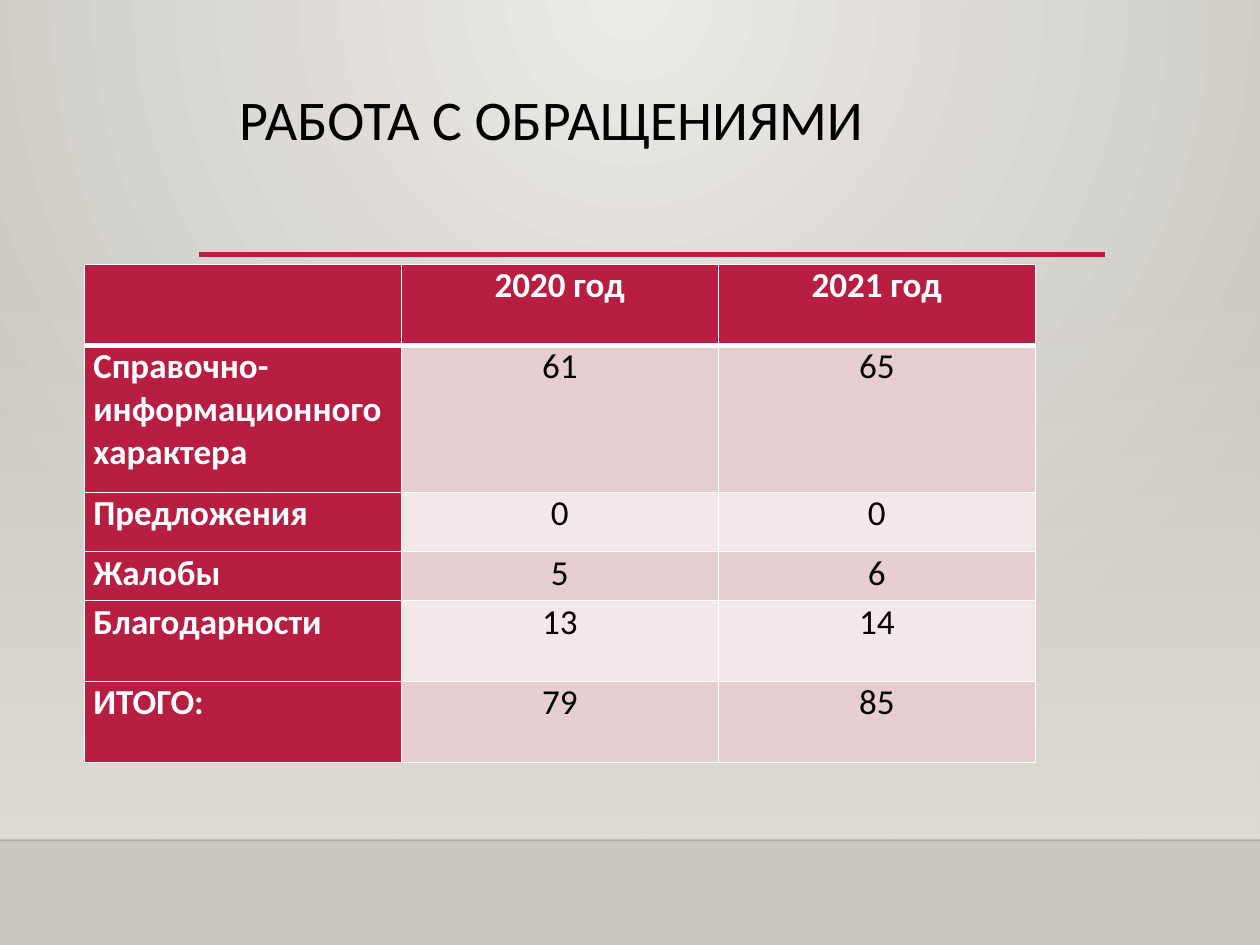
"""Build a slide with a table of citizens' requests by year."""
from dataclasses import dataclass

from lxml import etree
from pptx import Presentation
from pptx.dml.color import RGBColor
from pptx.dml.fill import FillFormat
from pptx.enum.shapes import MSO_CONNECTOR, MSO_SHAPE
from pptx.enum.text import MSO_ANCHOR, PP_ALIGN
from pptx.oxml.ns import qn
from pptx.slide import Slide
from pptx.table import _Cell
from pptx.text.text import _Paragraph
from pptx.util import Cm, Pt

STRAIGHT = MSO_CONNECTOR.STRAIGHT
RECTANGLE = MSO_SHAPE.RECTANGLE
TOP = MSO_ANCHOR.TOP
LEFT, CENTER = PP_ALIGN.LEFT, PP_ALIGN.CENTER

CRIMSON = RGBColor(0xB7, 0x1E, 0x42)
PINK = RGBColor(0xE6, 0xCD, 0xCF)
PALE_PINK = RGBColor(0xF3, 0xE8, 0xE9)
WHITE = RGBColor(0xFF, 0xFF, 0xFF)
BLACK = RGBColor(0x00, 0x00, 0x00)
NEAR_BLACK = RGBColor(0x00, 0x00, 0x01)
GLOW = RGBColor(0xEC, 0xEA, 0xE7)
STONE = RGBColor(0xCA, 0xC7, 0xC1)
SAND = RGBColor(0xDF, 0xDB, 0xD5)

FONT = "Calibri"
SLIDE_WIDTH, SLIDE_HEIGHT = 25.4, 19.05
FLOOR_TOP = 16.94
COLUMN_WIDTH = 6.39


@dataclass(frozen=True)
class Rule:
    left: float
    right: float
    top: float
    color: RGBColor
    width: float
    opacity: int = 100


@dataclass(frozen=True)
class TableRow:
    height: float
    texts: tuple[str, str, str]


RULES = (
    Rule(0, SLIDE_WIDTH, FLOOR_TOP, NEAR_BLACK, 1, 20),
    Rule(4.01, 22.28, 5.13, CRIMSON, 2.5),
)
ROWS = (
    TableRow(1.63, ("", "2020 год", "2021 год")),
    TableRow(2.97, ("Справочно-информационного характера", "61", "65")),
    TableRow(1.19, ("Предложения", "0", "0")),
    TableRow(0.99, ("Жалобы", "5", "6")),
    TableRow(1.63, ("Благодарности", "13", "14")),
    TableRow(1.63, ("ИТОГО:", "79", "85")),
)


def set_opacity(color_element: etree._Element, percent: int) -> None:
    etree.SubElement(color_element, qn("a:alpha"), val=str(percent * 1000))


def set_gradient(fill: FillFormat, start: RGBColor, end: RGBColor) -> None:
    fill.gradient()
    for stop, color, position in zip(fill.gradient_stops, (start, end), (0, 1)):
        stop.color.rgb = color
        stop.position = position


def style_paragraph(paragraph: _Paragraph, size: int, color: RGBColor, bold: bool = False) -> None:
    paragraph.font.name = FONT
    paragraph.font.size = Pt(size)
    paragraph.font.color.rgb = color
    paragraph.font.bold = bold


def add_background(slide: Slide) -> None:
    set_gradient(slide.background.fill, GLOW, STONE)
    gradient = next(slide.background._cSld.iter(qn("a:gradFill")))
    gradient.remove(gradient.find(qn("a:lin")))
    circle = etree.Element(qn("a:path"), path="circle")
    etree.SubElement(circle, qn("a:fillToRect"), l="43000", t="0", r="43000", b="100000")
    gradient.find(qn("a:gsLst")).addnext(circle)


def add_wall_fade(slide: Slide) -> None:
    top = 5.59
    shape = slide.shapes.add_shape(
        RECTANGLE, 0, Cm(top), Cm(SLIDE_WIDTH), Cm(FLOOR_TOP - top)
    )
    shape.shadow.inherit = False
    shape.line.fill.background()
    set_gradient(shape.fill, SAND, SAND)
    shape.fill.gradient_angle = 270
    set_opacity(next(shape._element.spPr.iter(qn("a:srgbClr"))), 0)


def add_rule(slide: Slide, rule: Rule) -> None:
    connector = slide.shapes.add_connector(
        STRAIGHT, Cm(rule.left), Cm(rule.top), Cm(rule.right), Cm(rule.top)
    )
    connector.line.color.rgb = rule.color
    connector.line.width = Pt(rule.width)
    properties = connector._element.spPr
    if rule.opacity < 100:
        set_opacity(next(properties.iter(qn("a:srgbClr"))), rule.opacity)
    etree.SubElement(properties, qn("a:effectLst"))


def add_title(slide: Slide) -> None:
    box = slide.shapes.add_textbox(Cm(4.57), Cm(1.73), Cm(18.31), Cm(3.56))
    box.text_frame.word_wrap = True
    box.text_frame.vertical_anchor = TOP
    paragraph = box.text_frame.paragraphs[0]
    paragraph.text = "РАБОТА С ОБРАЩЕНИЯМИ"
    paragraph.line_spacing = 0.9
    style_paragraph(paragraph, 32, BLACK)


def set_borders(cell: _Cell, top: int, bottom: int) -> None:
    widths = {"lnL": 1, "lnR": 1, "lnT": top, "lnB": bottom}
    properties = cell._tc.get_or_add_tcPr()
    for side, width in widths.items():
        line = etree.SubElement(properties, qn(f"a:{side}"), w=str(Pt(width)))
        fill = etree.SubElement(line, qn("a:solidFill"))
        etree.SubElement(fill, qn("a:srgbClr"), val=str(WHITE))


def fill_cell(cell: _Cell, text: str, row: int, column: int) -> None:
    heading = row == 0 or column == 0
    set_borders(cell, top=3 if row == 1 else 1, bottom=3 if row == 0 else 1)
    cell.fill.solid()
    cell.fill.fore_color.rgb = CRIMSON if heading else PINK if row % 2 else PALE_PINK
    cell.margin_left = cell.margin_right = Cm(0.18)
    cell.margin_top = cell.margin_bottom = 0
    paragraph = cell.text_frame.paragraphs[0]
    paragraph.text = text
    paragraph.alignment = CENTER if column else LEFT
    style_paragraph(paragraph, 20, WHITE if heading else BLACK, heading)


def add_requests_table(slide: Slide) -> None:
    column_count = len(ROWS[0].texts)
    table = slide.shapes.add_table(
        len(ROWS), column_count, Cm(1.7), Cm(5.33),
        Cm(COLUMN_WIDTH * column_count), Cm(sum(row.height for row in ROWS)),
    ).table
    for column in table.columns:
        column.width = Cm(COLUMN_WIDTH)
    for row_index, row in enumerate(ROWS):
        table.rows[row_index].height = Cm(row.height)
        for column_index, text in enumerate(row.texts):
            fill_cell(table.cell(row_index, column_index), text, row_index, column_index)


def main() -> None:
    presentation = Presentation()
    presentation.slide_width = Cm(SLIDE_WIDTH)
    presentation.slide_height = Cm(SLIDE_HEIGHT)
    slide = presentation.slides.add_slide(presentation.slide_layouts[6])
    add_background(slide)
    add_wall_fade(slide)
    for rule in RULES:
        add_rule(slide, rule)
    add_title(slide)
    add_requests_table(slide)
    presentation.save("out.pptx")


if __name__ == "__main__":
    main()
